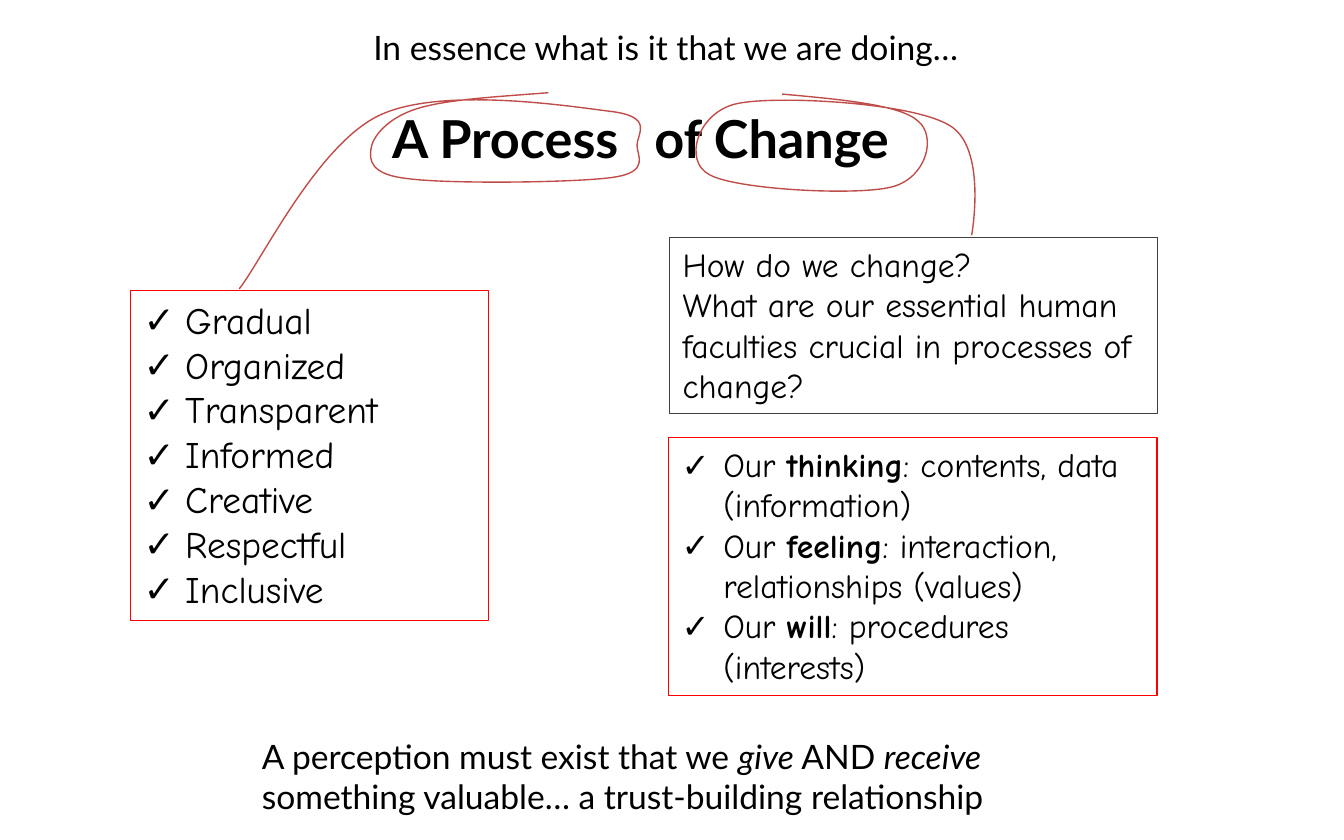
"""Build the "A Process of Change" slide on a grid of 100 columns by 62.5 rows."""
from lxml import etree
from pptx import Presentation
from pptx import util as u
from pptx.dml.color import RGBColor
from pptx.enum import shapes, text
from pptx.oxml.ns import qn

COLORS = {"ink": "000000", "red": "FF0000", "gray": "404040", "loop": "BF4C48"}

deck = Presentation()
deck.slide_width, deck.slide_height = u.Inches(10), u.Inches(6.25)
COLUMN, ROW = deck.slide_width / 100, deck.slide_height / 62.5
page = deck.slides.add_slide(deck.slide_layouts[6])


def add_span(para, words, size=18, font="Lato", bold=False, italic=False):
    span = para.add_run()
    span.text = words
    span.font.size, span.font.name = u.Pt(size), font
    span.font.bold, span.font.italic = bold, italic
    span.font.color.rgb = RGBColor.from_string(COLORS["ink"])


def add_box(paragraphs, left, top, width, height, outline=None, bullet=None, **style):
    place = [u.Emu(round(n)) for n in (left * COLUMN, top * ROW, width * COLUMN, height * ROW)]
    if outline:
        box = page.shapes.add_shape(shapes.MSO_SHAPE.RECTANGLE, *place)
        box.shadow.inherit = False
        box.fill.background()
        box.line.color.rgb = RGBColor.from_string(COLORS[outline])
        box.line.width = u.Pt(0.75)
    else:
        box = page.shapes.add_textbox(*place)
    frame = box.text_frame
    frame.word_wrap = True
    frame.auto_size = text.MSO_AUTO_SIZE.SHAPE_TO_FIT_TEXT
    frame.vertical_anchor = text.MSO_ANCHOR.TOP
    for index, spans in enumerate(paragraphs):
        para = frame.add_paragraph() if index else frame.paragraphs[0]
        para.alignment = text.PP_ALIGN.LEFT
        if bullet:
            properties = para._p.get_or_add_pPr()
            indent = round(3.1 * COLUMN)
            properties.set("marL", str(indent))
            properties.set("indent", str(-indent))
            etree.SubElement(properties, qn("a:buFont")).set("typeface", "Lato")
            etree.SubElement(properties, qn("a:buChar")).set("char", bullet)
        for words, emphasis in spans:
            add_span(para, words, **style, **emphasis)


PLAIN, BOLD, ITALIC = {}, {"bold": True}, {"italic": True}
qualities = ["Gradual", "Organized", "Transparent", "Informed", "Creative", "Respectful", "Inclusive"]
questions = ["How do we change?",
             "What are our essential human faculties crucial in processes of change?"]
faculties = [("thinking", ": contents, data (information)"),
             ("feeling", ": interaction, relationships (values)"),
             ("will", ": procedures (interests)")]
closing = [("A perception must exist that we ", PLAIN), ("give", ITALIC), (" AND ", PLAIN),
           ("receive ", ITALIC), ("something valuable… a trust-building relationship", PLAIN)]

add_box([[("A Process", BOLD)]], 28.2, 7.4, 20.6, 5.7, size=28)
add_box([[("of Change", BOLD)]], 47.7, 7.4, 25.3, 5.7, size=28)
add_box([[(quality, PLAIN)] for quality in qualities], 9.7, 21.6, 26.65, 24.6,
        outline="red", bullet="✓", size=20, font="Comic Neue")
add_box([[(question, PLAIN)] for question in questions], 49.8, 17.66, 36.35, 13.1,
        outline="gray", font="Comic Neue")
add_box([[("Our ", PLAIN), (faculty, BOLD), (detail, PLAIN)] for faculty, detail in faculties],
        49.74, 32.54, 36.35, 19.2, outline="red", bullet="✓", font="Comic Neue")

process_loop = [
    (40.8, 6.9), (37, 7.2), (33.2, 7.4), (31, 8.1), (28.8, 8.8), (27.7, 10.2), (27.6, 11.1),
    (27.5, 11.9), (27.5, 13), (30.4, 13.3), (33.4, 13.7), (42.8, 13.6), (45.6, 13.2),
    (48.4, 12.8), (47.4, 11.6), (47.4, 10.8), (47.4, 10), (48.7, 8.7), (45.5, 8.3),
    (42.3, 7.9), (32.8, 6.4), (28.2, 8.6), (23.6, 10.8), (19.4, 19.5), (17.8, 21.5)]
change_loop = [
    (58.2, 7), (62.6, 7.4), (67, 7.8), (68.3, 9), (69.7, 10.1), (69, 13.2), (66.4, 13.9),
    (63.8, 14.6), (54.7, 14.1), (52.8, 13), (50.8, 12), (51.9, 8.3), (54.9, 7.7),
    (57.8, 7.1), (67.7, 7.6), (70.6, 9.3), (73.5, 10.9), (72.3, 17.5), (72.3, 17.5)]

for knots, (left, top, width, height) in ((process_loop, (17.8, 6.9, 29.8, 14.6)),
                                          (change_loop, (51.8, 7, 20.7, 10.5))):
    points = [(round((x - left) * COLUMN), round((y - top) * ROW)) for x, y in knots]
    builder = page.shapes.build_freeform(*points[0])
    builder.add_line_segments(points[1:], close=False)
    loop = builder.convert_to_shape()
    loop.left, loop.top = u.Emu(round(left * COLUMN)), u.Emu(round(top * ROW))
    loop.width, loop.height = u.Emu(round(width * COLUMN)), u.Emu(round(height * ROW))
    outline = next(loop._element.iter(qn("a:path")))
    outline.set("w", str(loop.width))
    outline.set("h", str(loop.height))
    for segment in outline.findall(qn("a:lnTo")):
        outline.remove(segment)
    start = next(outline.iter(qn("a:pt")))
    start.set("x", str(points[0][0]))
    start.set("y", str(points[0][1]))
    for first in range(1, len(points), 3):
        curve = etree.SubElement(outline, qn("a:cubicBezTo"))
        for x, y in points[first:first + 3]:
            etree.SubElement(curve, qn("a:pt"), x=str(x), y=str(y))
    loop.shadow.inherit = False
    loop.fill.background()
    loop.line.color.rgb = RGBColor.from_string(COLORS["loop"])
    loop.line.width = u.Pt(0.75)

add_box([[("In essence what is it that we are doing…", PLAIN)]], 26.8, 1.5, 47.7, 4)
add_box([closing], 18.5, 54.26, 64, 7.1)

deck.save("out.pptx")
